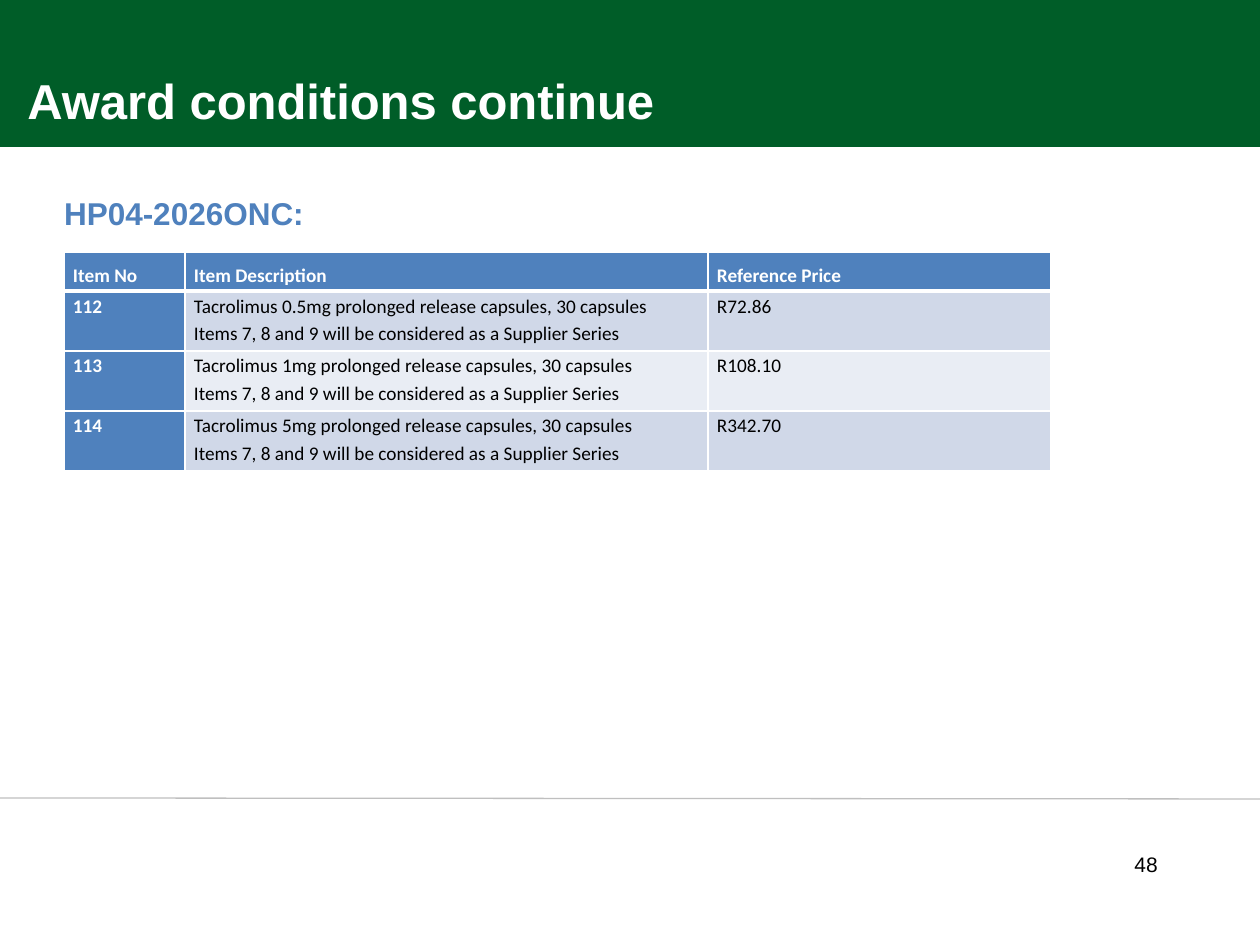
from dataclasses import dataclass

from lxml import etree
from pptx import Presentation
from pptx.dml.color import RGBColor
from pptx.enum.shapes import MSO_CONNECTOR, MSO_SHAPE
from pptx.enum.text import MSO_ANCHOR, PP_ALIGN
from pptx.oxml.ns import qn
from pptx.util import Emu, Pt

RECT = MSO_SHAPE.RECTANGLE
STRAIGHT = MSO_CONNECTOR.STRAIGHT
TOP, BOTTOM = MSO_ANCHOR.TOP, MSO_ANCHOR.BOTTOM
LEFT, RIGHT, JUSTIFY = PP_ALIGN.LEFT, PP_ALIGN.RIGHT, PP_ALIGN.JUSTIFY


@dataclass(frozen=True)
class Theme:
    green: str = "005D28"
    blue: str = "4F81BD"
    bands: tuple = ("D0D8E8", "E9EDF4")
    rule: str = "BFBFBF"
    white: str = "FFFFFF"
    black: str = "000000"
    font: str = "Arial"
    table_font: str = "Calibri"
    title_pt: int = 28
    heading_pt: int = 18
    number_pt: int = 12
    table_pt: int = 11


THEME = Theme()

COLUMNS = [121, 523, 343]
HEADER_HEIGHT, ROW_HEIGHT = 39, 60
HEADER = ["Item No ", "Item Description", "Reference Price"]
SERIES = "Items 7, 8 and 9 will be considered as a Supplier Series"
ITEMS = [("112", "0.5mg", "R72.86"), ("113", "1mg", "R108.10"), ("114", "5mg", "R342.70")]


def px(n):
    return Emu(round(n * 914400 / 126))


def rgb(color):
    return RGBColor.from_string(color)


def style(p, name, size, color, bold=False, align=LEFT, spacing=None):
    p.alignment = align
    p.line_spacing = spacing
    font = p.font
    font.name, font.size, font.bold = name, Pt(size), bold
    font.color.rgb = rgb(color)


def add_text(slide, box, text, size, color, anchor=TOP, **options):
    tf = slide.shapes.add_textbox(*map(px, box)).text_frame
    tf.word_wrap = True
    tf.vertical_anchor = anchor
    p = tf.paragraphs[0]
    p.text = text
    style(p, THEME.font, size, color, **options)
    return tf


def add_title_band(slide, box, title):
    left, top, width, height = box
    sp = slide.shapes.add_shape(RECT, *map(px, box))
    sp.shadow.inherit = False
    sp.fill.solid()
    sp.fill.fore_color.rgb = rgb(THEME.green)
    sp.line.fill.background()
    add_text(slide, (left + 15, top, width - 318, height - 11), title,
             THEME.title_pt, THEME.white, anchor=BOTTOM, bold=True)


def add_heading(slide, box, text):
    tf = add_text(slide, box, text, THEME.heading_pt, THEME.blue, bold=True, spacing=1.5)
    tf.margin_left = px(60)


def set_borders(cell, **widths):
    """Draw white cell borders; widths in points are keyed by side, L, R, T or B."""
    tc_pr = cell._tc.get_or_add_tcPr()
    for side, width in widths.items():
        ln = etree.SubElement(tc_pr, qn(f"a:ln{side}"), w=str(Pt(width)))
        fill = etree.SubElement(ln, qn("a:solidFill"))
        etree.SubElement(fill, qn("a:srgbClr"), val=THEME.white)


def fill_cell(cell, text, row, col):
    is_header = row == 0
    is_label = is_header or col == 0
    set_borders(cell, L=1, R=1, T=3 if row == 1 else 1, B=3 if is_header else 1)
    cell.fill.solid()
    cell.fill.fore_color.rgb = rgb(THEME.blue if is_label else THEME.bands[(row - 1) % 2])
    cell.margin_left = cell.margin_right = px(9)
    cell.margin_top = cell.margin_bottom = 0
    p = cell.text_frame.paragraphs[0]
    p.text = text
    style(p, THEME.table_font, THEME.table_pt, THEME.white if is_label else THEME.black,
          bold=is_label, align=JUSTIFY if is_header else LEFT,
          spacing=1.5 if is_header else 1.15)


def add_price_table(slide, left, top):
    rows = [HEADER] + [
        (number, f"Tacrolimus {dose} prolonged release capsules, 30 capsules\n{SERIES}", price)
        for number, dose, price in ITEMS
    ]
    heights = [HEADER_HEIGHT] + [ROW_HEIGHT] * len(ITEMS)
    box = (left, top, sum(COLUMNS), sum(heights))
    table = slide.shapes.add_table(len(rows), len(COLUMNS), *map(px, box)).table
    table.horz_banding = False
    for column, width in zip(table.columns, COLUMNS):
        column.width = px(width)
    for r, (values, height) in enumerate(zip(rows, heights)):
        table.rows[r].height = px(height)
        for c, value in enumerate(values):
            fill_cell(table.cell(r, c), value, r, c)


def add_footer(slide, box, number):
    left, top, width, height = box
    line = slide.shapes.add_connector(
        STRAIGHT, px(left), px(top), px(left + width), px(top + 1))
    line.line.color.rgb = rgb(THEME.rule)
    line.line.width = Pt(0.75)
    etree.SubElement(line._element.spPr, qn("a:effectLst"))
    add_text(slide, (left + 520, top + 47, 656, height - 47), number,
             THEME.number_pt, THEME.black, align=RIGHT)


def main():
    prs = Presentation()
    prs.slide_width, prs.slide_height = px(1260), px(945)
    slide = prs.slides.add_slide(prs.slide_layouts[6])
    add_title_band(slide, (0, 0, 1260, 147), "Award conditions continue")
    add_heading(slide, (4, 169, 1244, 120), "HP04-2026ONC:")
    add_price_table(slide, 64, 252)
    add_footer(slide, (0, 798, 1260, 147), "48 ")
    prs.save("out.pptx")


if __name__ == "__main__":
    main()
